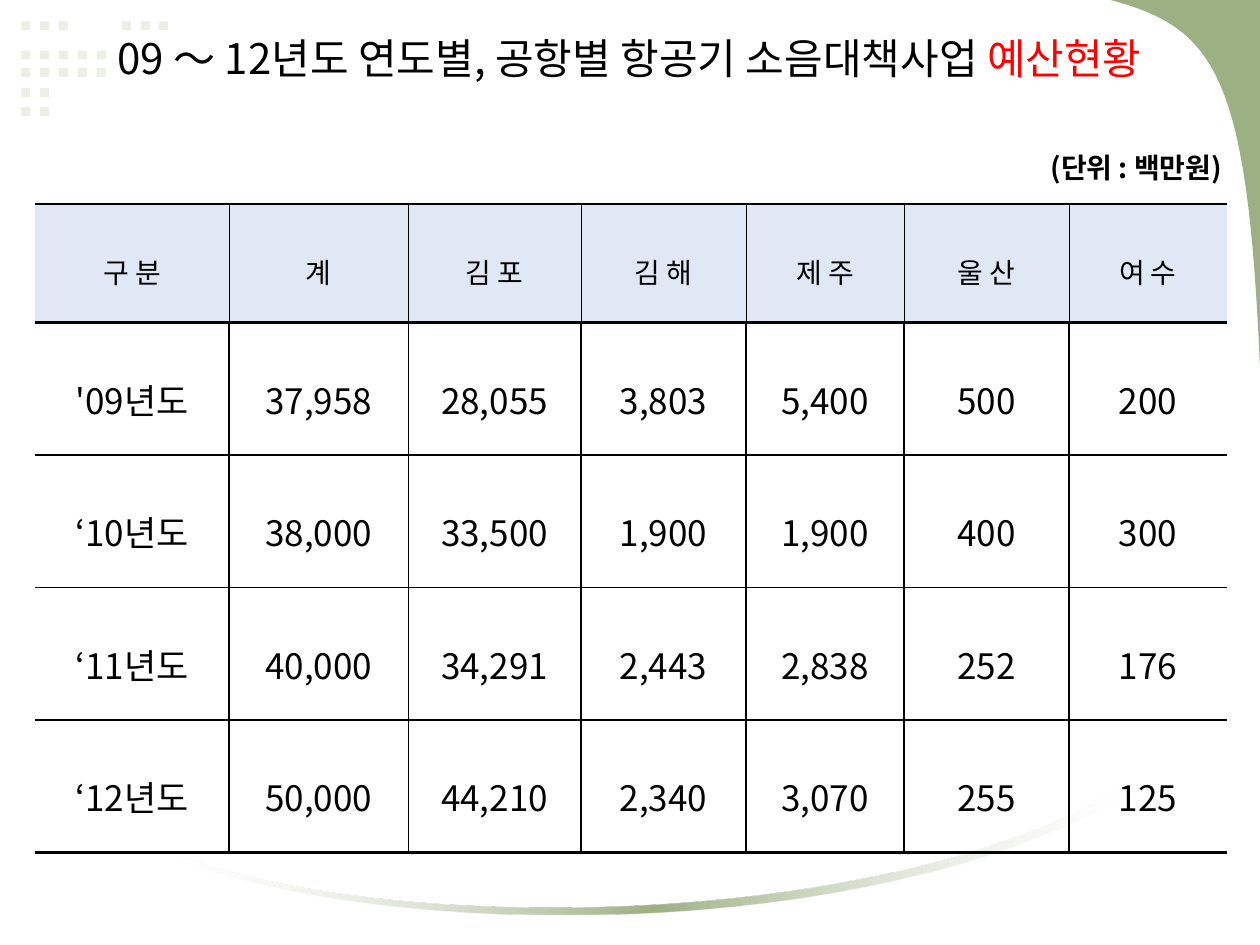
import lxml.etree
import pptx
import pptx.dml.color
import pptx.enum.shapes
import pptx.enum.text
import pptx.oxml
import pptx.oxml.ns
import pptx.util

Cm = pptx.util.Cm
Pt = pptx.util.Pt
RGBColor = pptx.dml.color.RGBColor
ALIGN = pptx.enum.text.PP_ALIGN
ANCHOR = pptx.enum.text.MSO_ANCHOR
qn = pptx.oxml.ns.qn

BLACK = RGBColor(0x00, 0x00, 0x00)
RED = RGBColor(0xFF, 0x00, 0x00)
WHITE = RGBColor(0xFF, 0xFF, 0xFF)
GREEN = RGBColor(0x9C, 0xB0, 0x84)
PALE_GREEN = RGBColor(0xEB, 0xEF, 0xE6)
HEADER_BLUE = RGBColor(0xE0, 0xE7, 0xF5)

KOREAN_FONT = "Noto Sans CJK KR"
THICK, NORMAL, HAIR = 1.7, 1, 0.28

COLUMN_WIDTHS = [3.91, 3.61, 3.48, 3.33, 3.18, 3.33, 3.18]
HEADER_HEIGHT, BODY_HEIGHT = 2.39, 2.67
BUDGET = [
    ["구 분", "계", "김 포", "김 해", "제 주", "울 산", "여 수"],
    ["'09", "37,958", "28,055", "3,803", "5,400", "500", "200"],
    ["‘10", "38,000", "33,500", "1,900", "1,900", "400", "300"],
    ["‘11", "40,000", "34,291", "2,443", "2,838", "252", "176"],
    ["‘12", "50,000", "44,210", "2,340", "3,070", "255", "125"],
]

# Dot rows: top in cm, then column positions in steps of DOT_PITCH
DOT_SIZE, DOT_LEFT, DOT_PITCH = 0.18, 0.43, 0.38
DOT_ROWS = [
    (0.43, [0, 1, 2, 5.34, 6.35, 7.3]),
    (1.02, range(5)),
    (1.37, range(5)),
    (1.78, range(2)),
    (2.16, range(2)),
]

# Bezier control points in cm
CORNER_CURVE = [(25.4, 7.39), (25.15, 1.52), (24.51, 0.56), (22.38, 0)]
SWOOSH_OUTER = [(22.66, 16.05), (17.53, 19.05), (7.62, 18.92), (3.61, 17.32)]
SWOOSH_INNER = [(3.61, 17.25), (7.62, 18.77), (17.53, 18.85), (22.66, 15.88)]


def curve_points(controls, steps=32):
    """Sample a cubic Bezier curve."""
    points = []
    for step in range(steps + 1):
        t = step / steps
        weights = [(1 - t) ** 3, 3 * t * (1 - t) ** 2, 3 * t * t * (1 - t), t ** 3]
        points.append(tuple(sum(weight * point[axis] for weight, point in zip(weights, controls))
                            for axis in (0, 1)))
    return points


def fill_plain(shape, color):
    shape.shadow.inherit = False
    shape.line.fill.background()
    shape.fill.solid()
    shape.fill.fore_color.rgb = color


def add_outline(page, points):
    corners = [(Cm(x), Cm(y)) for x, y in points]
    builder = page.shapes.build_freeform(*corners[0])
    builder.add_line_segments(corners[1:], close=True)
    shape = builder.convert_to_shape()
    fill_plain(shape, GREEN)
    return shape


def fade_ends(shape):
    """Fade the fill from clear white to green and back."""
    namespace = pptx.oxml.ns.nsdecls("a")
    clear = f'<a:srgbClr val="{WHITE}"><a:alpha val="30000"/></a:srgbClr>'
    gradient = pptx.oxml.parse_xml(
        f'<a:gradFill {namespace} rotWithShape="1"><a:gsLst>'
        f'<a:gs pos="0">{clear}</a:gs>'
        f'<a:gs pos="50000"><a:srgbClr val="{GREEN}"/></a:gs>'
        f'<a:gs pos="100000">{clear}</a:gs>'
        f'</a:gsLst><a:lin ang="0" scaled="1"/></a:gradFill>')
    solid = shape.element.spPr.find(qn("a:solidFill"))
    solid.getparent().replace(solid, gradient)


def add_dots(page):
    for top, columns in DOT_ROWS:
        for column in columns:
            dot = page.shapes.add_shape(
                pptx.enum.shapes.MSO_SHAPE.RECTANGLE, Cm(DOT_LEFT + column * DOT_PITCH),
                Cm(top), Cm(DOT_SIZE), Cm(DOT_SIZE))
            fill_plain(dot, PALE_GREEN)


def format_span(span, size, color=BLACK, bold=False, font=KOREAN_FONT):
    span.font.size = Pt(size)
    span.font.bold = bold
    span.font.color.rgb = color
    span.font.name = font
    if font == KOREAN_FONT:
        east_asian = lxml.etree.SubElement(span.font._element, qn("a:ea"))
        east_asian.set("typeface", font)


def set_title(page):
    title = page.shapes.title
    title.left, title.top, title.width, title.height = Cm(0.89), Cm(0.53), Cm(23.6), Cm(1.27)
    frame = title.text_frame
    frame.auto_size = pptx.enum.text.MSO_AUTO_SIZE.NONE
    frame.vertical_anchor = ANCHOR.TOP
    para = frame.paragraphs[0]
    para.text = "09 ～ 12년도 연도별, 공항별 항공기 소음대책사업 "
    para.alignment = ALIGN.CENTER
    format_span(para.runs[0], 24)
    accent = para.add_run()
    accent.text = "예산현황"
    format_span(accent, 24, RED)
    # Bring the title in front of the decoration
    title.element.getparent().append(title.element)


def add_unit_note(page):
    box = page.shapes.add_textbox(Cm(20.29), Cm(2.92), Cm(4.72), Cm(0.94))
    box.text_frame.word_wrap = False
    para = box.text_frame.paragraphs[0]
    para.text = "(단위 : 백만원) "
    para.alignment = ALIGN.RIGHT
    format_span(para.runs[0], 16, bold=True)


def set_borders(cell, widths):
    """Draw the given sides, listed in the order L, R, T, B; None means no line."""
    properties = cell._tc.get_or_add_tcPr()
    for index, (side, width) in enumerate(zip("LRTB", widths)):
        line = pptx.oxml.parse_xml(
            f'<a:ln{side} {pptx.oxml.ns.nsdecls("a")} w="{Pt(width or 0)}"/>')
        fill = lxml.etree.SubElement(line, qn("a:solidFill" if width else "a:noFill"))
        if width:
            lxml.etree.SubElement(fill, qn("a:srgbClr")).set("val", str(BLACK))
        properties.insert(index, line)


def format_cell(cell, text, row, column):
    is_header = row == 0
    size = 16 if is_header else 20
    cell.vertical_anchor = ANCHOR.MIDDLE
    cell.margin_left = cell.margin_right = cell.margin_top = cell.margin_bottom = Cm(0.05)
    para = cell.text_frame.paragraphs[0]
    para.text = text
    para.alignment = ALIGN.CENTER
    para.line_spacing = 1.4
    format_span(para.runs[0], size)
    if column == 0 and not is_header:
        suffix = para.add_run()
        suffix.text = "년도"
        format_span(suffix, size, font="Calibri")
    if is_header:
        cell.fill.solid()
        cell.fill.fore_color.rgb = HEADER_BLUE
    else:
        cell.fill.background()
    inner = HAIR if is_header else NORMAL
    set_borders(cell, [
        inner if column > 0 else None,
        inner if column < len(COLUMN_WIDTHS) - 1 else None,
        THICK if row <= 1 else NORMAL,
        THICK if row in (0, len(BUDGET) - 1) else NORMAL,
    ])


def add_budget_table(page):
    heights = [HEADER_HEIGHT] + [BODY_HEIGHT] * (len(BUDGET) - 1)
    table = page.shapes.add_table(
        len(heights), len(COLUMN_WIDTHS), Cm(0.71), Cm(4.11),
        Cm(sum(COLUMN_WIDTHS)), Cm(sum(heights))).table
    table.first_row = table.horz_banding = False
    for column, width in zip(table.columns, COLUMN_WIDTHS):
        column.width = Cm(width)
    for row, height in enumerate(heights):
        table.rows[row].height = Cm(height)
        for column, text in enumerate(BUDGET[row]):
            format_cell(table.cell(row, column), text, row, column)


def main():
    deck = pptx.Presentation()
    deck.slide_width, deck.slide_height = Cm(25.4), Cm(19.05)
    page = deck.slides.add_slide(deck.slide_layouts[5])

    # Background decoration
    add_dots(page)
    add_outline(page, [(25.4, 0)] + curve_points(CORNER_CURVE))
    fade_ends(add_outline(page, curve_points(SWOOSH_OUTER) + curve_points(SWOOSH_INNER)))

    # Content
    add_budget_table(page)
    set_title(page)
    add_unit_note(page)
    deck.save("out.pptx")


if __name__ == "__main__":
    main()
